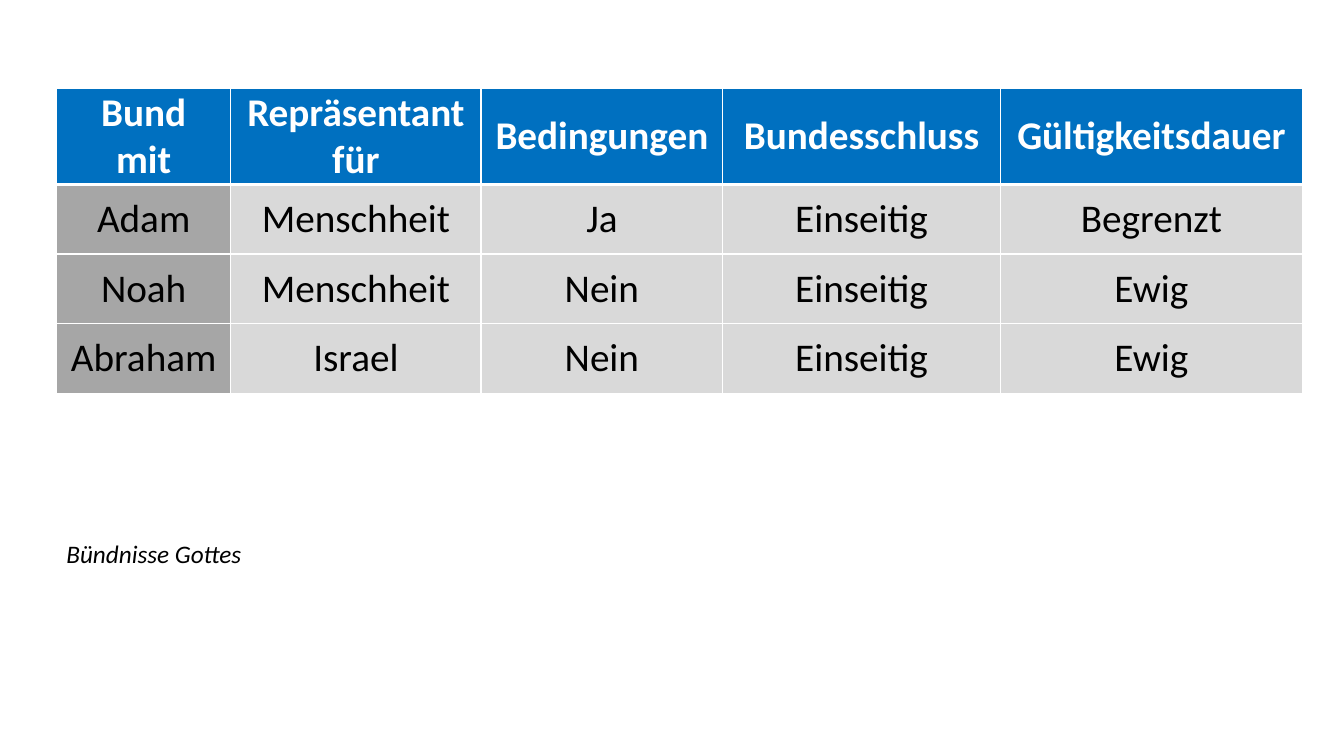
from dataclasses import dataclass

from lxml.etree import SubElement
from pptx import Presentation
from pptx.dml.color import RGBColor
from pptx.enum.text import MSO_ANCHOR, MSO_AUTO_SIZE, PP_ALIGN
from pptx.oxml.ns import qn
from pptx.slide import Slide
from pptx.table import _Cell
from pptx.text.text import _Paragraph
from pptx.util import Inches, Length, Pt

WIDE, HIGH = 13.33, 7.5
LEFT = 0.56 / WIDE
WHITE, BLACK = "FFFFFF", "000000"


@dataclass(frozen=True)
class Font:
    size: int
    color: str = BLACK
    bold: bool = False
    italic: bool = False


@dataclass(frozen=True)
class Look:
    fill: str
    font: Font
    top: int = 1
    bottom: int = 1


@dataclass(frozen=True)
class Column:
    share: float
    cells: tuple[str, ...]


HEAD = Look("0070C0", Font(28, WHITE, bold=True), bottom=3)
NAME = Look("A6A6A6", Font(28))
BODY = Look("D9D9D9", Font(28))
ROWS = [0.92 / HIGH] + [0.69 / HIGH] * 3
COLUMNS = [
    Column(1.73 / WIDE, ("Bund mit", "Adam", "Noah", "Abraham")),
    Column(2.48 / WIDE, ("Repräsentant für", "Menschheit", "Menschheit", "Israel")),
    Column(2.4 / WIDE, ("Bedingungen", "Ja", "Nein", "Nein")),
    Column(2.75 / WIDE, ("Bundesschluss", "Einseitig", "Einseitig", "Einseitig")),
    Column(3 / WIDE, ("Gültigkeitsdauer", "Begrenzt", "Ewig", "Ewig")),
]


def across(share: float) -> Length:
    return Inches(share * WIDE)


def down(share: float) -> Length:
    return Inches(share * HIGH)


def color(code: str) -> RGBColor:
    return RGBColor.from_string(code)


def style(para: _Paragraph, font: Font) -> None:
    for run in para.runs:
        run.font.name = "Calibri"
        run.font.size = Pt(font.size)
        run.font.bold = font.bold
        run.font.italic = font.italic
        run.font.color.rgb = color(font.color)


def border(cell: _Cell, side: str, width: int) -> None:
    props = cell._tc.get_or_add_tcPr()
    line = SubElement(props, qn(f"a:ln{side}"), w=str(Pt(width)))
    fill = SubElement(line, qn("a:solidFill"))
    SubElement(fill, qn("a:srgbClr"), val=WHITE)


def paint(cell: _Cell, text: str, look: Look) -> None:
    for side, width in zip("LRTB", (1, 1, look.top, look.bottom)):
        border(cell, side, width)
    cell.fill.solid()
    cell.fill.fore_color.rgb = color(look.fill)
    cell.margin_left = cell.margin_right = Inches(0.14)
    cell.margin_top = cell.margin_bottom = 0
    cell.vertical_anchor = MSO_ANCHOR.MIDDLE
    cell.text_frame.text = text
    para = cell.text_frame.paragraphs[0]
    para.alignment = PP_ALIGN.CENTER
    style(para, look.font)


def choose(row: int, col: int) -> Look:
    if row == 0:
        return HEAD
    look = NAME if col == 0 else BODY
    return Look(look.fill, look.font, top=3) if row == 1 else look


def grid(slide: Slide) -> None:
    width = sum(column.share for column in COLUMNS)
    frame = slide.shapes.add_table(
        len(ROWS), len(COLUMNS), across(LEFT), down(0.88 / HIGH),
        across(width), down(sum(ROWS)),
    )
    table = frame.table
    for row, share in zip(table.rows, ROWS):
        row.height = down(share)
    for col, column in enumerate(COLUMNS):
        table.columns[col].width = across(column.share)
        for row, text in enumerate(column.cells):
            paint(table.cell(row, col), text, choose(row, col))


def label(slide: Slide, text: str) -> None:
    box = slide.shapes.add_textbox(
        across(LEFT), down(5.29 / HIGH), across(1.96 / WIDE), down(0.4 / HIGH)
    )
    frame = box.text_frame
    frame.word_wrap = False
    frame.auto_size = MSO_AUTO_SIZE.SHAPE_TO_FIT_TEXT
    frame.text = text
    style(frame.paragraphs[0], Font(18, italic=True))


def main() -> None:
    deck = Presentation()
    deck.slide_width, deck.slide_height = across(1), down(1)
    slide = deck.slides.add_slide(deck.slide_layouts[6])
    grid(slide)
    label(slide, "Bündnisse Gottes")
    deck.save("out.pptx")


if __name__ == "__main__":
    main()
